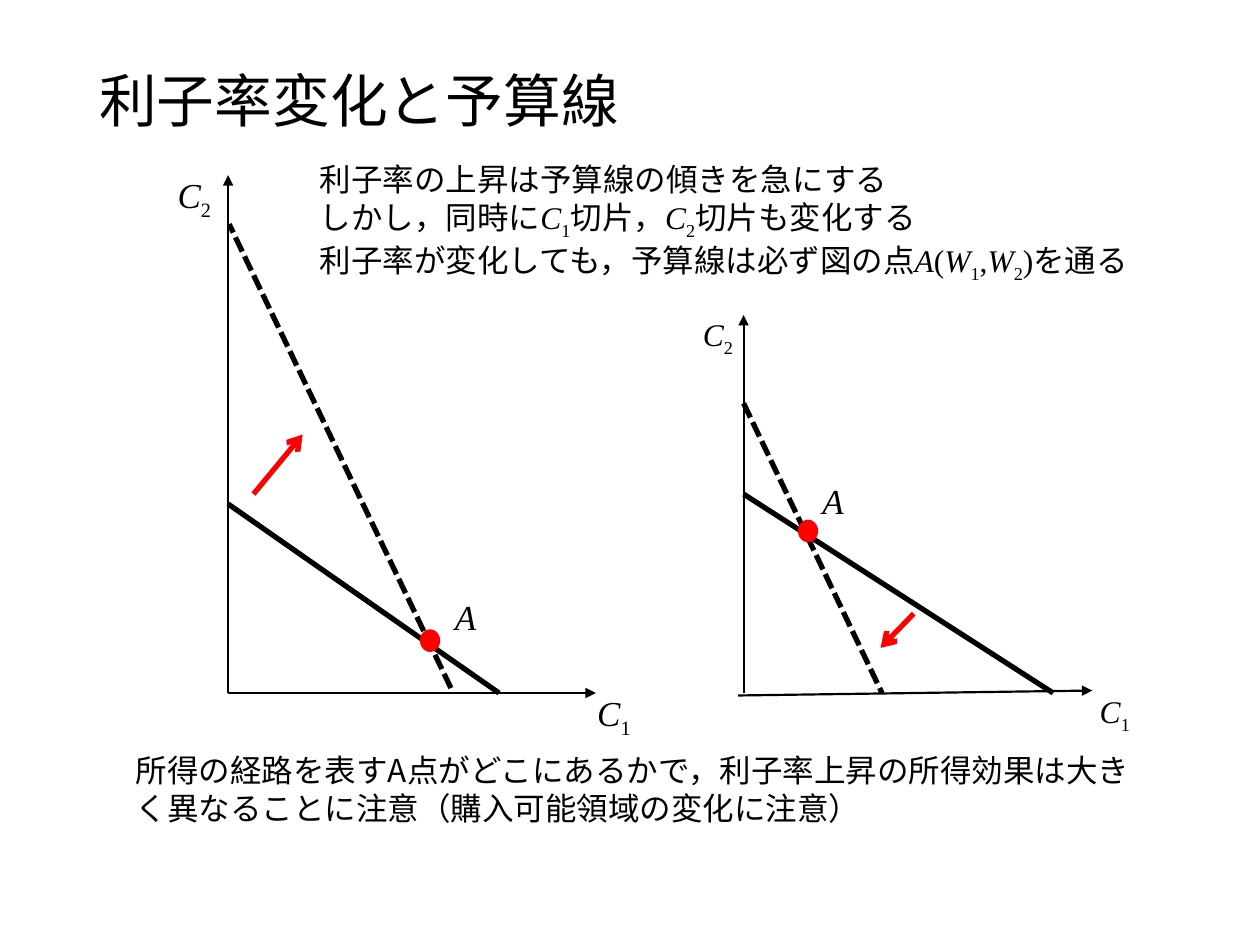
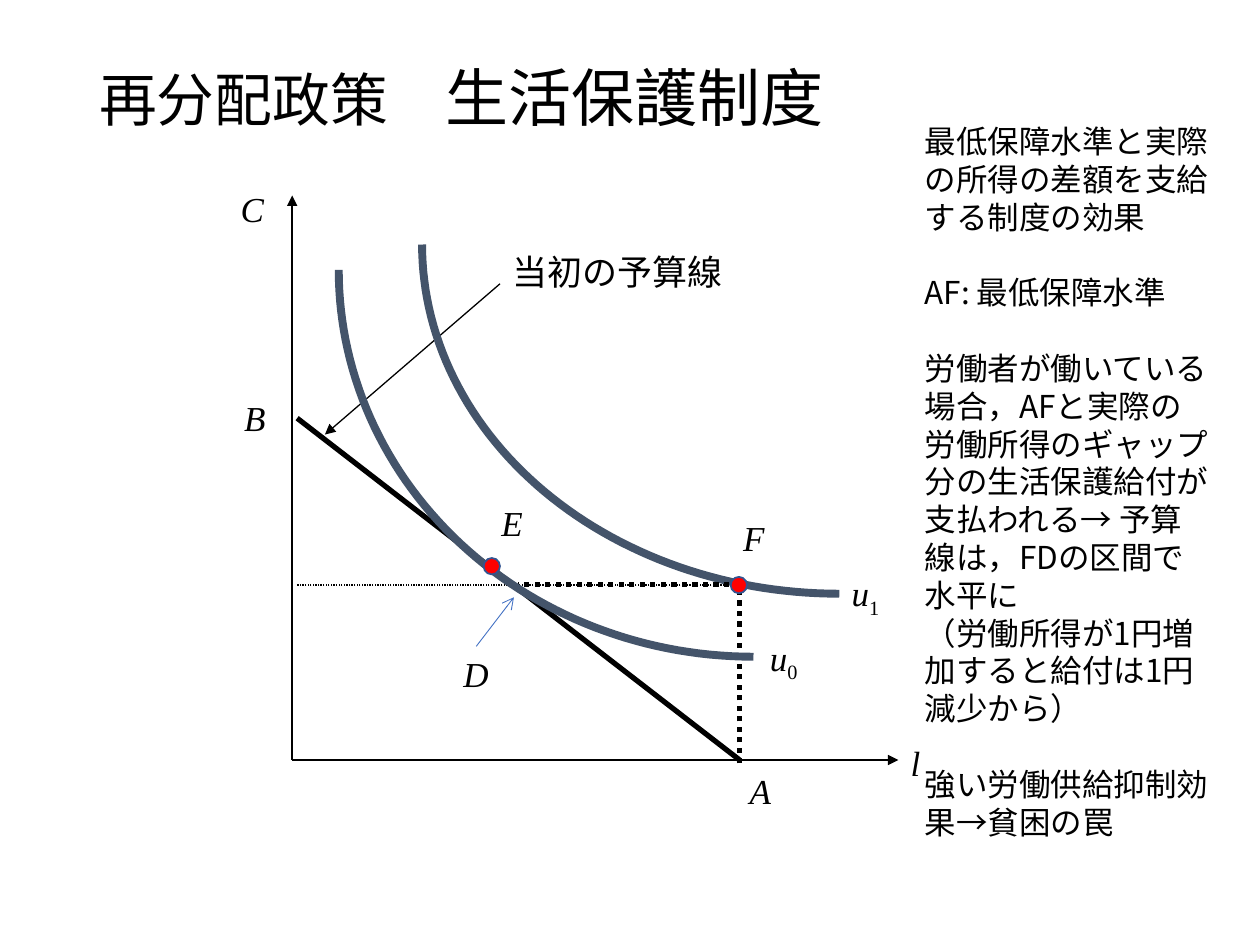
from math import cos, pi, sin

from lxml import etree
from pptx import Presentation
from pptx.dml.color import RGBColor
from pptx.enum.dml import MSO_LINE
from pptx.enum.shapes import MSO_CONNECTOR, MSO_SHAPE
from pptx.enum.text import MSO_ANCHOR
from pptx.oxml.ns import qn
from pptx.util import Cm, Pt

BLACK = RGBColor(0x00, 0x00, 0x00)
RED = RGBColor(0xFF, 0x00, 0x00)
SLATE = RGBColor(0x44, 0x54, 0x6A)
BLUE = RGBColor(0x44, 0x72, 0xC4)
NAVY = RGBColor(0x32, 0x54, 0x91)

STRAIGHT = MSO_CONNECTOR.STRAIGHT
OVAL = MSO_SHAPE.OVAL
DASH, DOTS = MSO_LINE.SQUARE_DOT, MSO_LINE.ROUND_DOT
TOP, MIDDLE = MSO_ANCHOR.TOP, MSO_ANCHOR.MIDDLE

SANS, SERIF = "Noto Sans CJK JP", "Times New Roman"
PLAIN = {"name": SANS}
ROMAN = {"name": SERIF}
VAR = {"name": SERIF, "italic": True}
SUB = {"name": SERIF, "italic": False}


def sub(name, index):
    """Runs of an italic variable with a lowered index."""
    return [(name, VAR), (index, SUB)]


class Deck:
    def __init__(self):
        self.prs = Presentation()
        self.prs.slide_width, self.prs.slide_height = Cm(25.4), Cm(19.05)
        self.shapes = None

    def page(self, runs, width, height):
        """Start a slide and set its title."""
        slide = self.prs.slides.add_slide(self.prs.slide_layouts[6])
        self.shapes = slide.shapes
        self.text((1.75, 1.02, width, height), [runs], 33, MIDDLE, 0.9)

    def text(self, box, paras, size=18, anchor=TOP, pitch=None, gaps=()):
        """Write paragraphs; those numbered in gaps follow a free line."""
        frame = self.shapes.add_textbox(*map(Cm, box)).text_frame
        frame.word_wrap = True
        frame.vertical_anchor = anchor
        for num, runs in enumerate(paras):
            para = frame.add_paragraph() if num else frame.paragraphs[0]
            if pitch:
                para.line_spacing = pitch
            if num in gaps:
                para.space_before = Pt(21.6)
            for words, style in runs:
                self.run(para, words, style, size)

    def run(self, para, words, style, size):
        run = para.add_run()
        run.text = words
        for key, value in {"size": Pt(size), **style}.items():
            setattr(run.font, key, value)
        run.font.color.rgb = BLACK
        props = run.font._element
        etree.SubElement(props, qn("a:ea"), typeface=style["name"])
        if style is SUB:
            props.set("baseline", "-25000")

    def label(self, x, y, runs, width=1.0, size=20):
        self.text((x, y, width, size * 0.056), [runs], size)

    def line(self, start, end, width=3, color=BLACK, dash=None, head=None):
        item = self.shapes.add_connector(STRAIGHT, *map(Cm, start + end))
        item.line.color.rgb = color
        item.line.width = Pt(width)
        if dash:
            item.line.dash_style = dash
        if head:
            etree.SubElement(item.line._get_or_add_ln(), qn("a:tailEnd"), type=head)
        etree.SubElement(item._element.spPr, qn("a:effectLst"))

    def axis(self, start, end):
        self.line(start, end, 1.25, head="triangle")

    def dot(self, x, y, width, height, edge, weight):
        item = self.shapes.add_shape(OVAL, *map(Cm, (x, y, width, height)))
        item.shadow.inherit = False
        item.fill.solid()
        item.fill.fore_color.rgb = RED
        item.line.color.rgb = edge
        item.line.width = Pt(weight)

    def curve(self, x, y, width, height, steps=60):
        """Draw the lower left quarter of an ellipse."""
        turns = [pi / 2 * step / steps for step in range(steps + 1)]
        points = [(Cm(x + width * (1 - cos(turn))), Cm(y + height * sin(turn)))
                  for turn in turns]
        path = self.shapes.build_freeform(*points[0])
        path.add_line_segments(points[1:], close=False)
        item = path.convert_to_shape()
        item.shadow.inherit = False
        item.fill.background()
        item.line.color.rgb = SLATE
        item.line.width = Pt(4.5)


PANELS = [
    {"up": ((4.6, 13.97), (4.6, 3.53)), "right": ((4.6, 13.97), (12.01, 13.97)),
     "old": ((4.6, 10.16), (10.06, 13.97)), "new": ((9.09, 13.87), (4.62, 4.52)),
     "shift": ((5.11, 9.96), (6.1, 8.76)), "dot": (8.48, 12.7),
     "A": (8.92, 11.89), "C1": (11.79, 13.82), "C2": (3.33, 3.38),
     "wide": (1.14, 1.55, 1.78), "size": 20},
    {"up": ((14.99, 13.97), (14.99, 6.35)), "right": ((14.88, 14.02), (22.02, 13.92)),
     "old": ((14.99, 9.96), (21.23, 13.97)), "new": ((14.99, 8.13), (17.78, 13.97)),
     "shift": ((18.42, 12.37), (17.75, 13.06)), "dot": (16.1, 10.49),
     "A": (16.33, 9.55), "C1": (21.92, 13.82), "C2": (13.92, 6.22),
     "wide": (0.99, 1.14, 1.35), "size": 18},
]


def rates(deck):
    deck.page([("利子率変化と予算線", PLAIN)], 11.56, 2.16)
    for panel in PANELS:
        deck.line(*panel["new"], dash=DASH)
        deck.axis(*panel["up"])
        deck.axis(*panel["right"])
        deck.line(*panel["old"])
        deck.line(*panel["shift"], color=RED, head="arrow")
        deck.dot(*panel["dot"], 0.38, 0.43, RED, 0.75)
        first, second, third = panel["wide"]
        deck.label(*panel["A"], [("A", VAR)], first)
        deck.label(*panel["C1"], sub("C", "1"), second, panel["size"])
        deck.label(*panel["C2"], sub("C", "2"), third, panel["size"])
    deck.text((2.49, 15.01, 21.01, 1.8), [[(
        "所得の経路を表すA点がどこにあるかで，利子率上昇の所得効果は"
        "大きく異なることに注意（購入可能領域の変化に注意）", PLAIN)]])
    deck.text((6.2, 3.1, 18.11, 2.57), [
        [("利子率の上昇は予算線の傾きを急にする", PLAIN)],
        [("しかし，同時に", PLAIN), *sub("C", "1"), ("切片，", PLAIN),
         *sub("C", "2"), ("切片も変化する", PLAIN)],
        [("利子率が変化しても，予算線は必ず図の点", PLAIN), ("A", VAR), ("(", ROMAN),
         *sub("W", "1"), (",", ROMAN), *sub("W", "2"), (")", ROMAN),
         ("を通る", PLAIN)],
    ])


NOTES = [
    "最低保障水準と実際の所得の差額を支給する制度の効果",
    "AF: 最低保障水準",
    "労働者が働いている場合，AFと実際の労働所得のギャップ分の"
    "生活保護給付が支払われる→ 予算線は，FDの区間で水平に",
    "（労働所得が1円増加すると給付は1円減少から）",
    "強い労働供給抑制効果→貧困の罠",
]
MARKS = {"B": (4.67, 7.87), "E": (9.86, 9.98), "F": (14.73, 10.29),
         "D": (9.09, 13.03), "A": (14.86, 15.39)}


def welfare(deck):
    deck.page([("再分配政策　", PLAIN), ("生活保護制度", {**PLAIN, "size": Pt(36)})],
              16.56, 2.03)
    zero, floor = (5.89, 15.32), 11.79
    full = 14.91
    deck.axis(zero, (5.89, 3.94))
    deck.axis(zero, (18.11, 15.32))
    deck.line((5.99, 8.43), (full, 15.32))
    deck.line((10.08, 5.72), (6.55, 8.76), 0.75, head="triangle")
    deck.curve(8.51, 4.93, 8.41, 7.04)
    deck.line((full, floor), (5.99, floor), 0.75, dash=DOTS)
    deck.line((full, 15.39), (full, floor), dash=DOTS)
    deck.line((full, floor), (10.44, floor), dash=DOTS)
    deck.curve(6.83, 5.44, 8.36, 7.8)
    for spot in ((14.73, 11.63), (9.75, 11.25)):
        deck.dot(*spot, 0.33, 0.33, NAVY, 1)
    deck.line((9.6, 13.03), (10.36, 12.04), 0.5, BLUE, head="arrow")
    deck.label(18.11, 14.83, [("l", VAR)], 1.4)
    deck.label(4.6, 3.66, [("C", VAR)], 1.4)
    for name, spot in MARKS.items():
        deck.label(*spot, [(name, VAR)])
    deck.label(15.27, 12.7, sub("u", "0"), 1.2)
    deck.label(16.92, 11.4, sub("u", "1"), 1.2)
    deck.label(10.08, 4.93, [("当初の予算線", PLAIN)], 6.4)
    deck.text((18.39, 2.34, 6.27, 14.88), [[(note, PLAIN)] for note in NOTES],
              gaps=(1, 2, 4))


def main():
    deck = Deck()
    rates(deck)
    welfare(deck)
    deck.prs.save("out.pptx")


if __name__ == "__main__":
    main()
